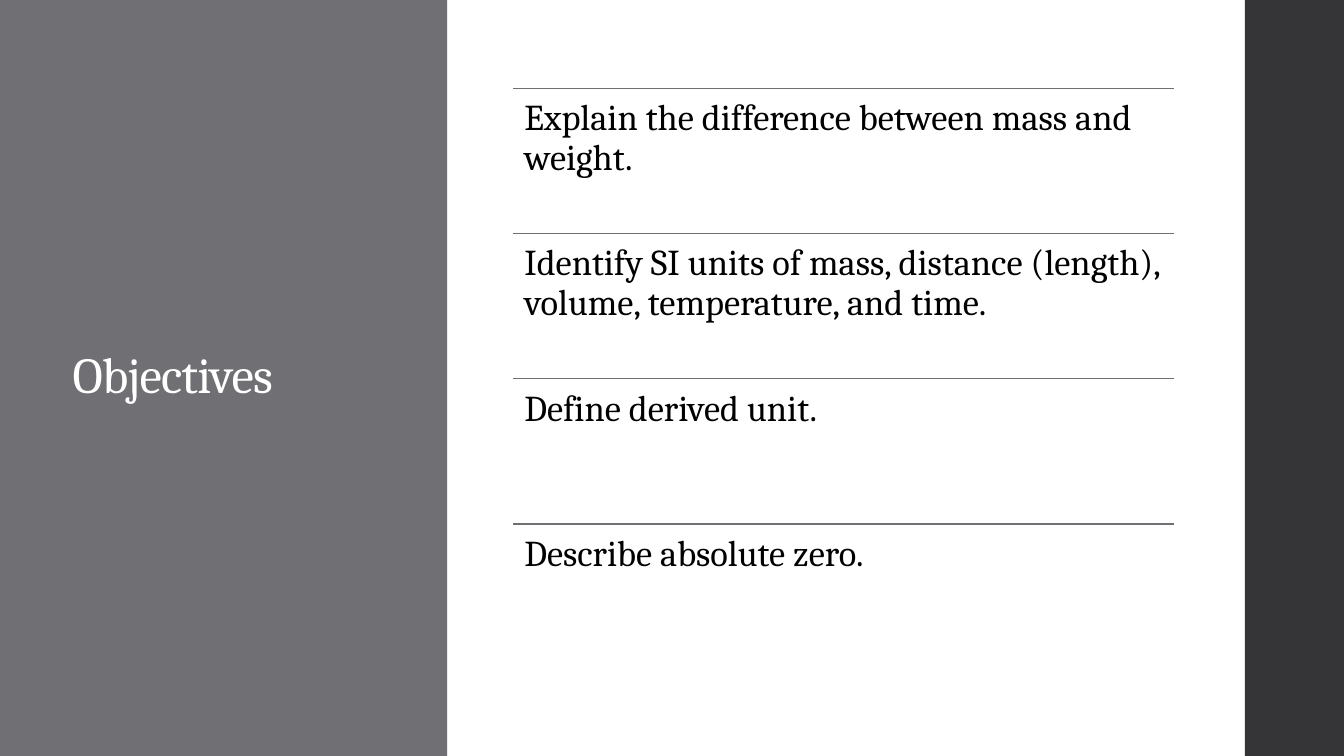
from lxml import etree
from pptx import Presentation
from pptx.dml.color import RGBColor
from pptx.enum.shapes import MSO_CONNECTOR, MSO_SHAPE
from pptx.enum.text import MSO_ANCHOR, MSO_AUTO_SIZE, PP_ALIGN
from pptx.oxml.ns import qn
from pptx.util import Pt

RECTANGLE = MSO_SHAPE.RECTANGLE
STRAIGHT = MSO_CONNECTOR.STRAIGHT
LEFT = PP_ALIGN.LEFT
TOP, MIDDLE = MSO_ANCHOR.TOP, MSO_ANCHOR.MIDDLE
NO_AUTOFIT = MSO_AUTO_SIZE.NONE
TITLE_ONLY = 5

FONT = "Cambria"
GREY, CHARCOAL, WHITE, BLACK = "6F6F74", "353537", "FFFFFF", "000000"
WIDTH, HEIGHT = 960, 540

OBJECTIVES = [
    "Explain the difference between mass and weight.",
    "Identify SI units of mass, distance (length), volume, temperature, and time.",
    "Define derived unit.",
    "Describe absolute zero.",
]


def color(value):
    return RGBColor.from_string(value)


def write(shape, text, size, hue, anchor=TOP, inset=7.2, tracking=0):
    frame = shape.text_frame
    frame.word_wrap = True
    frame.auto_size = NO_AUTOFIT
    frame.vertical_anchor = anchor
    frame.margin_left = frame.margin_right = Pt(inset)
    frame.margin_top = frame.margin_bottom = Pt(inset)
    para = frame.paragraphs[0]
    para.alignment = LEFT
    para.line_spacing = 0.9
    span = para.add_run()
    span.text = text
    span.font.name = FONT
    span.font.size = Pt(size)
    span.font.color.rgb = color(hue)
    if tracking:
        span.font._element.set("spc", str(round(tracking * 100)))


def add_band(slide, left, top, width, height, hue):
    band = slide.shapes.add_shape(RECTANGLE, Pt(left), Pt(top), Pt(width), Pt(height))
    band.shadow.inherit = False
    band.fill.solid()
    band.fill.fore_color.rgb = color(hue)
    band.line.fill.background()


def add_title_panel(slide, left, top, width, height):
    add_band(slide, left, top, width, height, GREY)
    title = slide.shapes.title
    title.left, title.top = Pt(left + 44.64), Pt(top + 65.5)
    title.width, title.height = Pt(213.84), Pt(408.24)
    write(title, "Objectives", 36, WHITE, anchor=MIDDLE, tracking=-0.5)
    title.element.getparent().append(title.element)


def add_rule(group, left, top, width):
    rule = group.shapes.add_connector(STRAIGHT, Pt(left), Pt(top), Pt(left + width), Pt(top))
    rule.line.color.rgb = color(GREY)
    rule.line.width = Pt(1.1)
    etree.SubElement(rule.element.spPr, qn("a:effectLst"))


def add_objectives(slide, left, top, width, height):
    group = slide.shapes.add_group_shape()
    row_height = height / len(OBJECTIVES)
    for index, objective in enumerate(OBJECTIVES):
        row_top = top + index * row_height
        add_rule(group, left, row_top, width)
        box = group.shapes.add_textbox(Pt(left), Pt(row_top), Pt(width), Pt(row_height))
        write(box, objective, 26, BLACK, inset=7.8)


def main():
    deck = Presentation()
    deck.slide_width, deck.slide_height = Pt(WIDTH), Pt(HEIGHT)
    slide = deck.slides.add_slide(deck.slide_layouts[TITLE_ONLY])
    add_band(slide, 889.2, 0, WIDTH - 889.2, HEIGHT, CHARCOAL)
    add_title_panel(slide, 0, 0, 319.5, HEIGHT)
    add_objectives(slide, 366.75, 63.2, 471.75, 414.6)
    deck.save("out.pptx")


if __name__ == "__main__":
    main()
